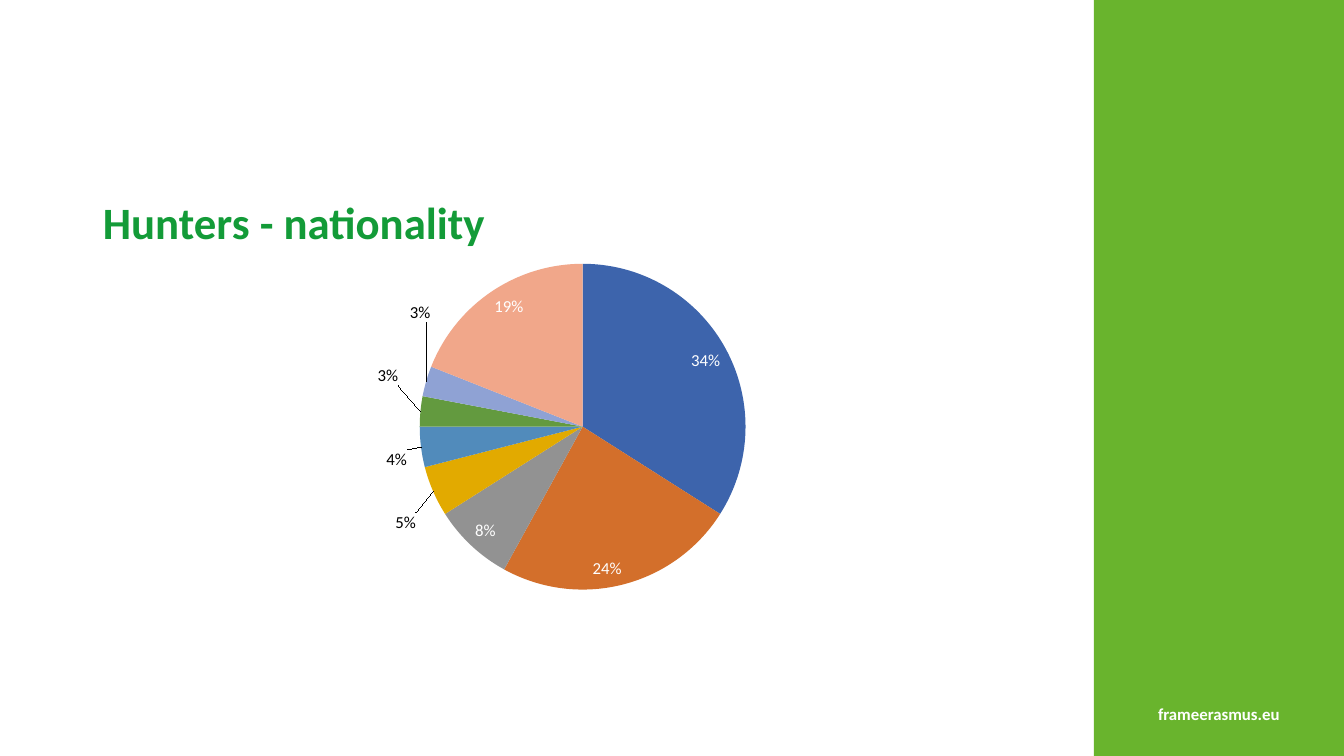
from dataclasses import dataclass

from lxml.etree import SubElement
from pptx import Presentation
from pptx.chart.data import CategoryChartData
from pptx.dml.color import RGBColor
from pptx.enum.chart import XL_CHART_TYPE, XL_LABEL_POSITION
from pptx.enum.shapes import MSO_SHAPE
from pptx.enum.text import MSO_ANCHOR, MSO_AUTO_SIZE, PP_ALIGN
from pptx.oxml import parse_xml
from pptx.oxml.ns import nsdecls, qn
from pptx.util import Pt

EMU_PER_PX = 914400 / 100.8
CHART_BOX = (219, 176, 907, 499)
PLOT_BOX = (329, 264, 508, 326)
SHARES = (34, 24, 8, 5, 4, 3, 3, 19)
OUTSIDE_LABEL_SHIFTS = {3: (-12, 19), 4: (-8, 2), 5: (-16, -25), 6: (10, -57)}


@dataclass(frozen=True)
class Theme:
    """Colours, font and type sizes of the slide."""

    font: str = "Calibri"
    band: str = "69B42D"
    title: str = "139B38"
    white: str = "FFFFFF"
    black: str = "000000"
    slices: tuple = ("3D64AC", "D36F2B", "929292", "E2AA00",
                     "518BBB", "639A3F", "8FA2D4", "F1A78A")
    title_size: int = 32
    small_size: int = 12


THEME = Theme()


def px(length):
    """Turn pixels into EMU."""
    return round(length * EMU_PER_PX)


def set_attributes(target, values):
    """Set each named attribute of the target."""
    for name, value in values.items():
        setattr(target, name, value)


def style_font(font, size, color, bold=False):
    """Apply the theme font with a size, colour and weight."""
    set_attributes(font, {"name": THEME.font, "size": Pt(size), "bold": bold})
    font.color.rgb = RGBColor.from_string(color)


def add_band(slide, box, color):
    """Add a plain filled rectangle."""
    shape = slide.shapes.add_shape(MSO_SHAPE.RECTANGLE, *map(px, box))
    shape.shadow.inherit = False
    shape.fill.solid()
    shape.fill.fore_color.rgb = RGBColor.from_string(color)
    shape.line.fill.background()


def add_text(slide, box, text, size, color, frame_format, paragraph_format):
    """Add a bold one-paragraph text box."""
    frame = slide.shapes.add_textbox(*map(px, box)).text_frame
    set_attributes(frame, {"word_wrap": True, **frame_format})
    paragraph = frame.paragraphs[0]
    paragraph.text = text
    set_attributes(paragraph, paragraph_format)
    style_font(paragraph.runs[0].font, size, color, bold=True)


def manual_layout(values):
    """Build a chart layout element from its ordered settings."""
    layout = parse_xml(f"<c:layout {nsdecls('c')}><c:manualLayout/></c:layout>")
    for name, value in values.items():
        SubElement(layout[0], qn(f"c:{name}")).set("val", str(value))
    return layout


def place_plot(chart):
    """Fix the inner plot area inside the chart frame."""
    left, top, width, height = CHART_BOX
    plot_left, plot_top, plot_width, plot_height = PLOT_BOX
    plot_area = chart._chartSpace.chart.plotArea
    for layout in plot_area.findall(qn("c:layout")):
        plot_area.remove(layout)
    plot_area.insert(0, manual_layout({
        "layoutTarget": "inner", "xMode": "edge", "yMode": "edge",
        "x": round((plot_left - left) / width, 3),
        "y": round((plot_top - top) / height, 3),
        "w": round(plot_width / width, 3),
        "h": round(plot_height / height, 3)}))


def label_slices(series):
    """Show percentages, moving those of thin slices outside."""
    labels = series.data_labels
    set_attributes(labels, {
        "show_value": False, "show_percentage": True, "number_format": "0%",
        "number_format_is_linked": False,
        "position": XL_LABEL_POSITION.INSIDE_END})
    style_font(labels.font, THEME.small_size, THEME.white)
    for index, (shift_x, shift_y) in OUTSIDE_LABEL_SHIFTS.items():
        label = series.points[index].data_label
        style_font(label.font, THEME.small_size, THEME.black)
        label.position = XL_LABEL_POSITION.OUTSIDE_END
    for element in series._element.iter(qn("c:dLbl")):
        shift_x, shift_y = OUTSIDE_LABEL_SHIFTS[int(element[0].get("val"))]
        element.insert(1, manual_layout({
            "x": round(shift_x / CHART_BOX[2], 3),
            "y": round(shift_y / CHART_BOX[3], 3)}))
        element.find(qn("c:showVal")).set("val", "0")
        element.find(qn("c:showPercent")).set("val", "1")


def add_pie(slide):
    """Add the pie chart of nationalities."""
    data = CategoryChartData()
    data.categories = [str(number) for number, _ in enumerate(SHARES, 1)]
    data.add_series("Series 1", SHARES)
    chart = slide.shapes.add_chart(
        XL_CHART_TYPE.PIE, *map(px, CHART_BOX), data).chart
    set_attributes(chart, {"has_title": False, "has_legend": False})
    style_font(chart.font, 10, THEME.black)
    place_plot(chart)
    plot = chart.plots[0]
    plot.vary_by_categories = True
    series = plot.series[0]
    for index, color in enumerate(THEME.slices):
        point_format = series.points[index].format
        point_format.fill.solid()
        point_format.fill.fore_color.rgb = RGBColor.from_string(color)
        point_format.line.fill.background()
    label_slices(series)


def main():
    """Build and save the slide."""
    presentation = Presentation()
    set_attributes(presentation,
                   {"slide_width": px(1344), "slide_height": px(756)})
    slide = presentation.slides.add_slide(presentation.slide_layouts[6])
    add_band(slide, (1094, 0, 250, 756), THEME.band)
    add_text(slide, (1094, 699, 250, 30), "frameerasmus.eu",
             THEME.small_size, THEME.white,
             {"auto_size": MSO_AUTO_SIZE.SHAPE_TO_FIT_TEXT},
             {"alignment": PP_ALIGN.CENTER})
    add_text(slide, (93, 176, 964, 98), "Hunters - nationality",
             THEME.title_size, THEME.title,
             {"vertical_anchor": MSO_ANCHOR.MIDDLE}, {"line_spacing": 0.9})
    add_pie(slide)
    presentation.save("out.pptx")


if __name__ == "__main__":
    main()
